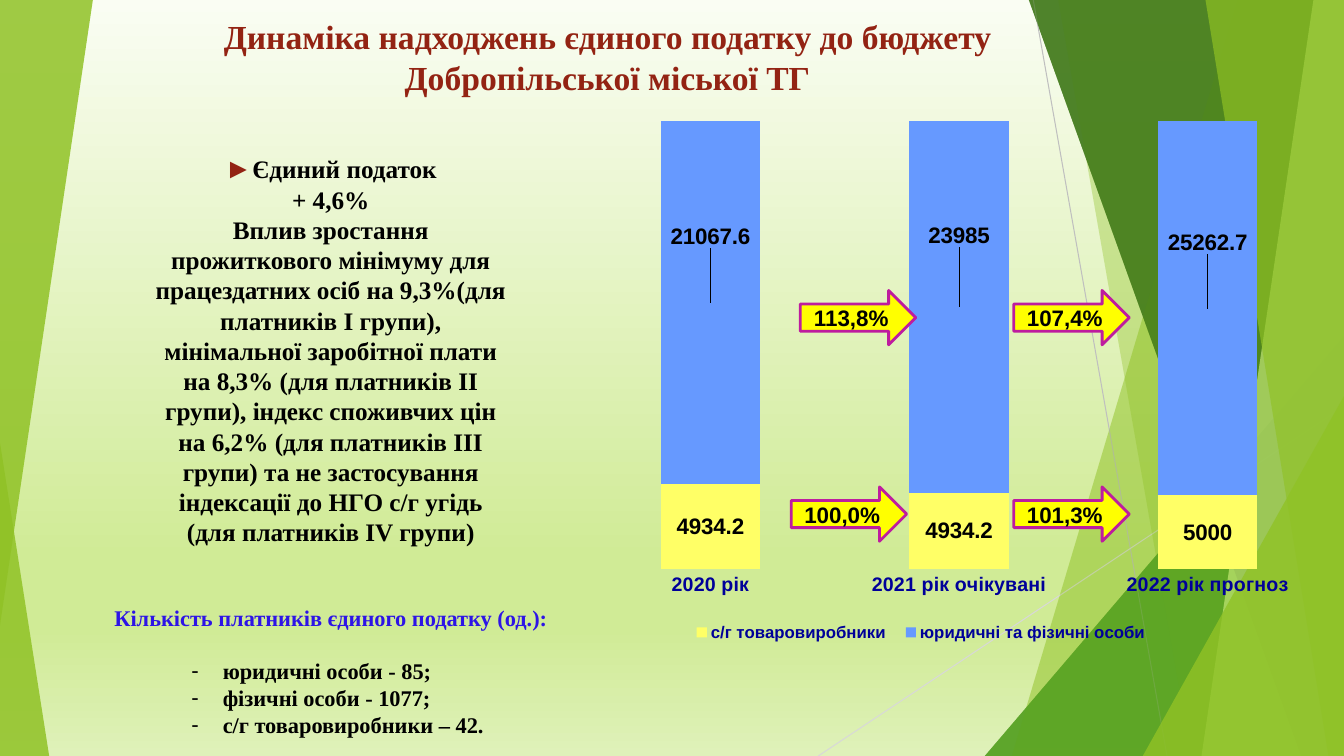
from lxml import etree
from pptx import Presentation
from pptx.chart.data import CategoryChartData
from pptx.dml.color import RGBColor
from pptx.enum.chart import XL_CHART_TYPE, XL_LEGEND_POSITION, XL_TICK_LABEL_POSITION, XL_TICK_MARK
from pptx.enum.shapes import MSO_CONNECTOR, MSO_SHAPE
from pptx.enum.text import MSO_ANCHOR, MSO_AUTO_SIZE, PP_ALIGN
from pptx.oxml import parse_xml
from pptx.oxml.ns import nsdecls, qn
from pptx.util import Cm, Pt

TRIANGLE, ARROW = MSO_SHAPE.ISOSCELES_TRIANGLE, MSO_SHAPE.RIGHT_ARROW
CENTER, LEFT = PP_ALIGN.CENTER, PP_ALIGN.LEFT
TOP, MIDDLE = MSO_ANCHOR.TOP, MSO_ANCHOR.MIDDLE
NO_TICK = XL_TICK_MARK.NONE
SERIF, SANS = "Times New Roman", "Arial"
BLACK, RED, BLUE, NAVY = "000000", "932313", "2D14E6", "000099"
W, H = 33.87, 19.05

TITLE = "Динаміка надходжень єдиного податку до бюджету Добропільської міської ТГ"
REASONS = [
    "Єдиний податок",
    "+ 4,6%",
    "Вплив зростання прожиткового мінімуму для працездатних осіб на 9,3%"
    "(для платників I групи), мінімальної заробітної плати на 8,3% "
    "(для платників II групи), індекс споживчих цін на 6,2% (для платників III групи) "
    "та не застосування індексації до НГО с/г угідь (для платників IV групи)",
]
PAYERS_HEADING = "Кількість платників єдиного податку (од.):"
PAYERS = ["юридичні особи - 85;", "фізичні особи - 1077;", "с/г товаровиробники – 42."]
YEARS = ["2020 рік", "2021 рік очікувані", "2022 рік прогноз"]
SERIES = [
    ("с/г товаровиробники", "FFFF66", [4934.2, 4934.2, 5000]),
    ("юридичні та фізичні особи", "6699FF", [21067.6, 23985, 25262.7]),
]
LABEL_SHIFTS = [-0.12, -0.13, -0.12]  # upper series, share of chart height
GROWTH = [("100,0%", 19.94, 12.27), ("113,8%", 20.17, 7.32),
          ("107,4%", 25.55, 7.32), ("101,3%", 25.55, 12.27)]
BACKGROUND = [(0, "FAFDF3"), (74, "D0EB96"), (83, "D0EB96"), (100, "DFF1B9")]
# Bands run to the right edge: (x at top, x at bottom, colour, opacity %).
# Corners are triangles on the right edge: (left, top, colour, opacity %).
RIGHT_DECOR = [
    (("band", 31.19, 25.5), "90C226", 30),
    (("band", 26.67, 30.02), "90C226", 20),
    (("corner", 24.82, 8.46), "54A021", 72),
    (("band", 25.93, 32.79), "3F7818", 70),
    (("band", 33.1, 30.28), "BFE471", 70),
    (("band", 30.38, 33.48), "90C226", 65),
    (("corner", 28.8, 9.98), "90C226", 80),
]
RAYS = [(26.04, 0, 29.41, H, "BFBFBF"), (W, 10.24, 20.62, H, "D8D8D8")]


def rgb(value):
    return RGBColor.from_string(value)


def paint(shape, color, opacity):
    shape.shadow.inherit = False
    shape.line.fill.background()
    shape.fill.solid()
    shape.fill.fore_color.rgb = rgb(color)
    clr = shape.fill._xPr.find(".//" + qn("a:srgbClr"))
    etree.SubElement(clr, qn("a:alpha"), val=str(opacity * 1000))


def add_triangle(left, top, width, height, apex, color, opacity, turn=0):
    sp = shapes.add_shape(TRIANGLE, Cm(left), Cm(top), Cm(width), Cm(height))
    sp.adjustments[0] = apex
    sp.rotation = turn
    paint(sp, color, opacity)


def add_right_decor():
    for (kind, a, b), color, opacity in RIGHT_DECOR:
        if kind == "corner":
            add_triangle(a, b, W - a, H - b, 1, color, opacity)
        else:
            fb = shapes.build_freeform(Cm(a), 0)
            fb.add_line_segments([(Cm(W), 0), (Cm(W), Cm(H)), (Cm(b), Cm(H))])
            paint(fb.convert_to_shape(), color, opacity)


def style(font, size, color, name=SERIF):
    for key, value in {"size": Pt(size), "bold": True, "name": name}.items():
        setattr(font, key, value)
    font.color.rgb = rgb(color)


def place(shape, left, top, width, height, anchor=TOP):
    box = {"left": left, "top": top, "width": width, "height": height}
    for key, value in box.items():
        setattr(shape, key, Cm(value))
    tf = shape.text_frame
    frame = {"word_wrap": True, "auto_size": MSO_AUTO_SIZE.NONE, "vertical_anchor": anchor}
    for key, value in frame.items():
        setattr(tf, key, value)
    return tf


def add_line(tf, runs, first=False, align=CENTER, before=0, bullet=None):
    """Add a paragraph of (text, size, colour) runs, with or without a bullet."""
    p = tf.paragraphs[0] if first else tf.add_paragraph()
    p.alignment, p.space_before = align, Pt(before)
    pPr = p._p.get_or_add_pPr()
    pPr.set("marL", str(Cm(4.6) if bullet else 0))
    pPr.set("indent", str(Cm(-0.79) if bullet else 0))
    if bullet:
        etree.SubElement(pPr, qn("a:buChar"), char=bullet)
    else:
        etree.SubElement(pPr, qn("a:buNone"))
    for text, size, color in runs:
        r = p.add_run()
        r.text = text
        style(r.font, size, color)


def manual_layout(**values):
    """Build a c:layout element; values keep the order of the schema."""
    items = "".join(f'<c:{k} val="{v}"/>' for k, v in values.items())
    return parse_xml(f'<c:layout {nsdecls("c")}><c:manualLayout>{items}</c:manualLayout></c:layout>')


def add_tax_chart():
    data = CategoryChartData()
    data.categories = YEARS
    for name, _, values in SERIES:
        data.add_series(name, values)
    chart = shapes.add_chart(XL_CHART_TYPE.COLUMN_STACKED_100, Cm(14.48), Cm(2.72),
                             Cm(19.4), Cm(13.84), data).chart
    chart.has_title = False
    chart.font.name, chart.font.size = SANS, Pt(10)
    plot = chart.plots[0]
    plot.gap_width, plot.overlap, plot.vary_by_categories = 150, 100, False
    for series, (_, color, _) in zip(plot.series, SERIES):
        series.format.fill.solid()
        series.format.fill.fore_color.rgb = rgb(color)
        series.data_labels.show_value = True
        style(series.data_labels.font, 16, BLACK, SANS)
    upper = plot.series[1]
    for i, shift in enumerate(LABEL_SHIFTS):
        style(upper.points[i].data_label.font, 16, BLACK, SANS)
        label = upper._element.findall(".//" + qn("c:dLbl"))[i]
        label.find(qn("c:idx")).addnext(manual_layout(x=0, y=shift))

    years, scale = chart.category_axis, chart.value_axis
    for axis in (years, scale):
        axis.major_tick_mark = axis.minor_tick_mark = NO_TICK
        axis.has_major_gridlines = False
        axis.format.line.fill.background()
    style(years.tick_labels.font, 14, NAVY, SANS)
    scale.tick_label_position = XL_TICK_LABEL_POSITION.NONE

    chart.has_legend = True
    legend = chart.legend
    legend.position, legend.include_in_layout = XL_LEGEND_POSITION.BOTTOM, False
    style(legend.font, 12, NAVY, SANS)
    for old in legend._element.findall(qn("c:layout")):
        legend._element.remove(old)
    legend._element.find(qn("c:legendPos")).addnext(
        manual_layout(xMode="edge", yMode="edge", x=0.14, y=0.93, w=0.62, h=0.05))
    area = chart._chartSpace.find(".//" + qn("c:plotArea"))
    for old in area.findall(qn("c:layout")):
        area.remove(old)
    area.insert(0, manual_layout(layoutTarget="inner", xMode="edge", yMode="edge",
                                 x=0.015, y=0.024, w=0.969, h=0.816))


prs = Presentation()
prs.slide_width, prs.slide_height = Cm(W), Cm(H)
s = prs.slides.add_slide(prs.slide_layouts[3])
shapes = s.shapes
title, reasons, payers = s.placeholders

fill = s.background.fill
fill.gradient()
fill.gradient_angle = 270
stops = fill._fill._gradFill.find(qn("a:gsLst"))
for stop in list(stops):
    stops.remove(stop)
for share, color in BACKGROUND:
    gs = etree.SubElement(stops, qn("a:gs"), pos=str(share * 1000))
    etree.SubElement(gs, qn("a:srgbClr"), val=color)

add_right_decor()
add_triangle(0, 11.15, 1.24, 7.9, 0, "90C226", 85)
for x1, y1, x2, y2, color in RAYS:
    ray = shapes.add_connector(MSO_CONNECTOR.STRAIGHT, Cm(x1), Cm(y1), Cm(x2), Cm(y2))
    ray.line.width, ray.line.color.rgb = Pt(0.75), rgb(color)
    etree.SubElement(ray._element.spPr, qn("a:effectLst"))
add_right_decor()
add_triangle(0, 0, 2.34, 15.75, 1, "90C226", 85, turn=180)

add_tax_chart()

add_line(place(title, 5.05, 0.28, 20.52, 2.06), [(TITLE, 24, RED)], first=True)

for text, left, top in GROWTH:
    sp = shapes.add_shape(ARROW, Cm(left), Cm(top), Cm(2.91), Cm(1.37))
    sp.shadow.inherit = False
    sp.fill.solid()
    sp.fill.fore_color.rgb = rgb("FFFF00")
    sp.line.color.rgb, sp.line.width = rgb("BE1C9F"), Pt(2)
    tf = place(sp, left, top, 2.91, 1.37, MIDDLE)
    p = tf.paragraphs[0]
    p.alignment = CENTER
    r = p.add_run()
    r.text = text
    style(r.font, 16, BLACK, SANS)

tf = place(reasons, 3.56, 3.66, 9.55, 10.9)
for i, text in enumerate(REASONS):
    marker = [("►", 20, RED)] if i == 0 else []
    add_line(tf, marker + [(text, 18, BLACK)], first=i == 0)

tf = place(payers, 0.76, 15.09, 15.16, 3.68)
add_line(tf, [(PAYERS_HEADING, 16, BLUE)], first=True)
for i, text in enumerate(PAYERS):
    add_line(tf, [(text, 16, BLACK)], align=LEFT, before=0 if i else 19, bullet="-")

prs.save("out.pptx")
